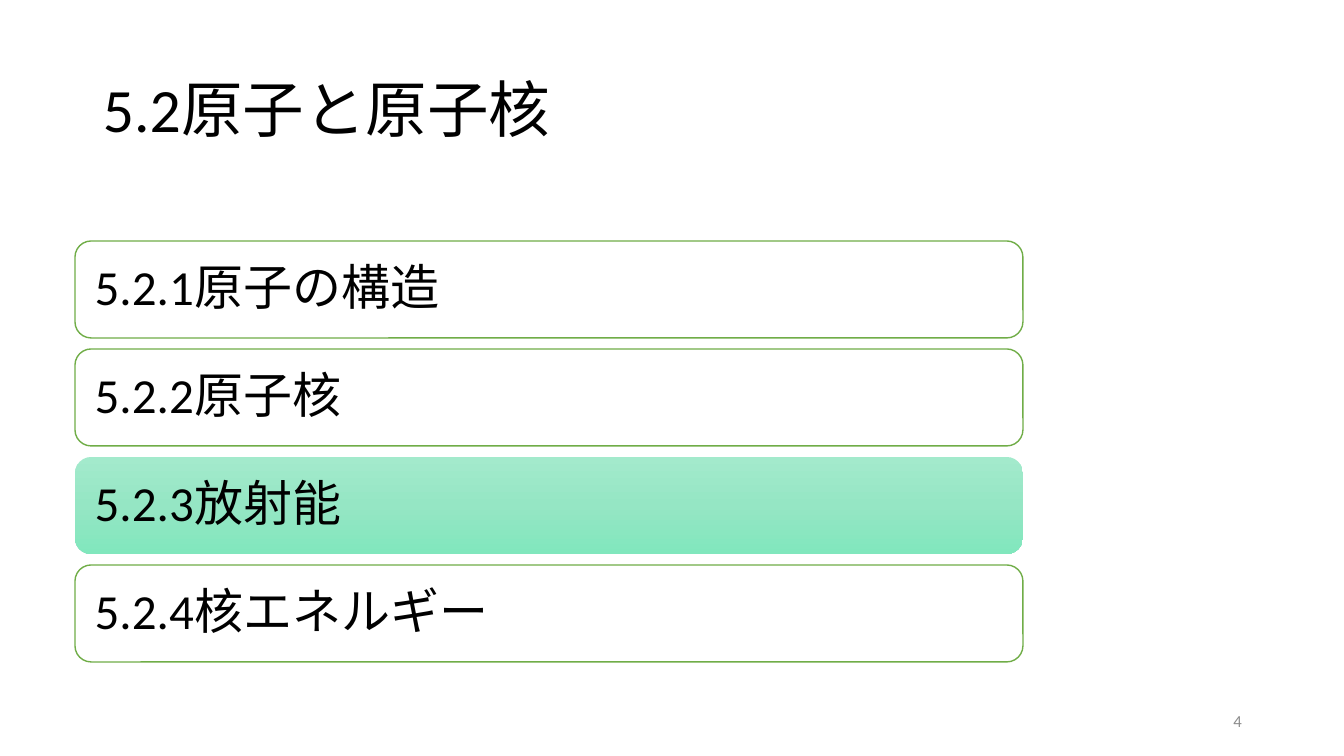
from copy import deepcopy
from dataclasses import dataclass

from pptx import Presentation
from pptx.dml.color import RGBColor
from pptx.enum.shapes import MSO_SHAPE
from pptx.enum.text import MSO_ANCHOR, PP_ALIGN
from pptx.oxml.ns import qn
from pptx.util import Emu, Pt

ROUND_RECT = MSO_SHAPE.ROUNDED_RECTANGLE
MIDDLE = MSO_ANCHOR.MIDDLE
LEFT, RIGHT = PP_ALIGN.LEFT, PP_ALIGN.RIGHT

EMU_PER_PX = 914400 / 100.8
FONT = "Calibri"
COLORS = {
    "text": "000000",
    "number": "8C8C8C",
    "box": "FFFFFF",
    "border": "70AD47",
}
HIGHLIGHT = [(0, "A3EACC"), (0.5, "95E6C4"), (1, "81E7BD")]

BOX_LEFT, BOX_TOP, BOX_WIDTH, BOX_HEIGHT = 75, 241, 948, 97
BOX_PITCH = 108


@dataclass
class Section:
    title: str
    current: bool = False


SECTIONS = [
    Section("5.2.1原子の構造"),
    Section("5.2.2原子核"),
    Section("5.2.3放射能", current=True),
    Section("5.2.4核エネルギー"),
]


def px(n: int) -> Emu:
    return Emu(round(n * EMU_PER_PX))


def rgb(name: str) -> RGBColor:
    return RGBColor.from_string(COLORS[name])


def write(sp, text: str, *, size: int, color: str = "text", align=LEFT,
          spacing: float = 1.0, inset: tuple[int, int] = (10, 5)) -> None:
    tf = sp.text_frame
    tf.word_wrap = True
    tf.vertical_anchor = MIDDLE
    tf.margin_left = tf.margin_right = px(inset[0])
    tf.margin_top = tf.margin_bottom = px(inset[1])
    p = tf.paragraphs[0]
    p.alignment = align
    p.line_spacing = spacing
    r = p.add_run()
    r.text = text
    r.font.name = FONT
    r.font.size = Pt(size)
    r.font.color.rgb = rgb(color)


def fill_highlight(sp) -> None:
    sp.fill.gradient()
    sp.fill.gradient_angle = 270  # top to bottom
    stops = sp._element.spPr.find(qn("a:gradFill")).find(qn("a:gsLst"))
    stops.insert(1, deepcopy(stops[0]))
    for stop, (position, color) in zip(sp.fill.gradient_stops, HIGHLIGHT):
        stop.position = position
        stop.color.rgb = RGBColor.from_string(color)
    sp.line.fill.background()


def add_section(s, section: Section, top: int) -> None:
    sp = s.shapes.add_shape(ROUND_RECT, px(BOX_LEFT), px(top),
                            px(BOX_WIDTH), px(BOX_HEIGHT))
    sp.shadow.inherit = False
    if section.current:
        fill_highlight(sp)
    else:
        sp.fill.solid()
        sp.fill.fore_color.rgb = rgb("box")
        sp.line.color.rgb = rgb("border")
        sp.line.width = Pt(1)
    write(sp, section.title, size=35, spacing=0.9, inset=(15, 15))


def main() -> None:
    prs = Presentation()
    prs.slide_width, prs.slide_height = px(1344), px(756)
    s = prs.slides.add_slide(prs.slide_layouts[6])

    # Title
    title = s.shapes.add_textbox(px(93), px(40), px(1159), px(146))
    write(title, "5.2原子と原子核", size=44, spacing=0.9)

    # Section list
    for i, section in enumerate(SECTIONS):
        add_section(s, section, BOX_TOP + i * BOX_PITCH)

    # Slide number
    number = s.shapes.add_textbox(px(950), px(701), px(302), px(40))
    write(number, "4", size=12, color="number", align=RIGHT)

    prs.save("out.pptx")


if __name__ == "__main__":
    main()
